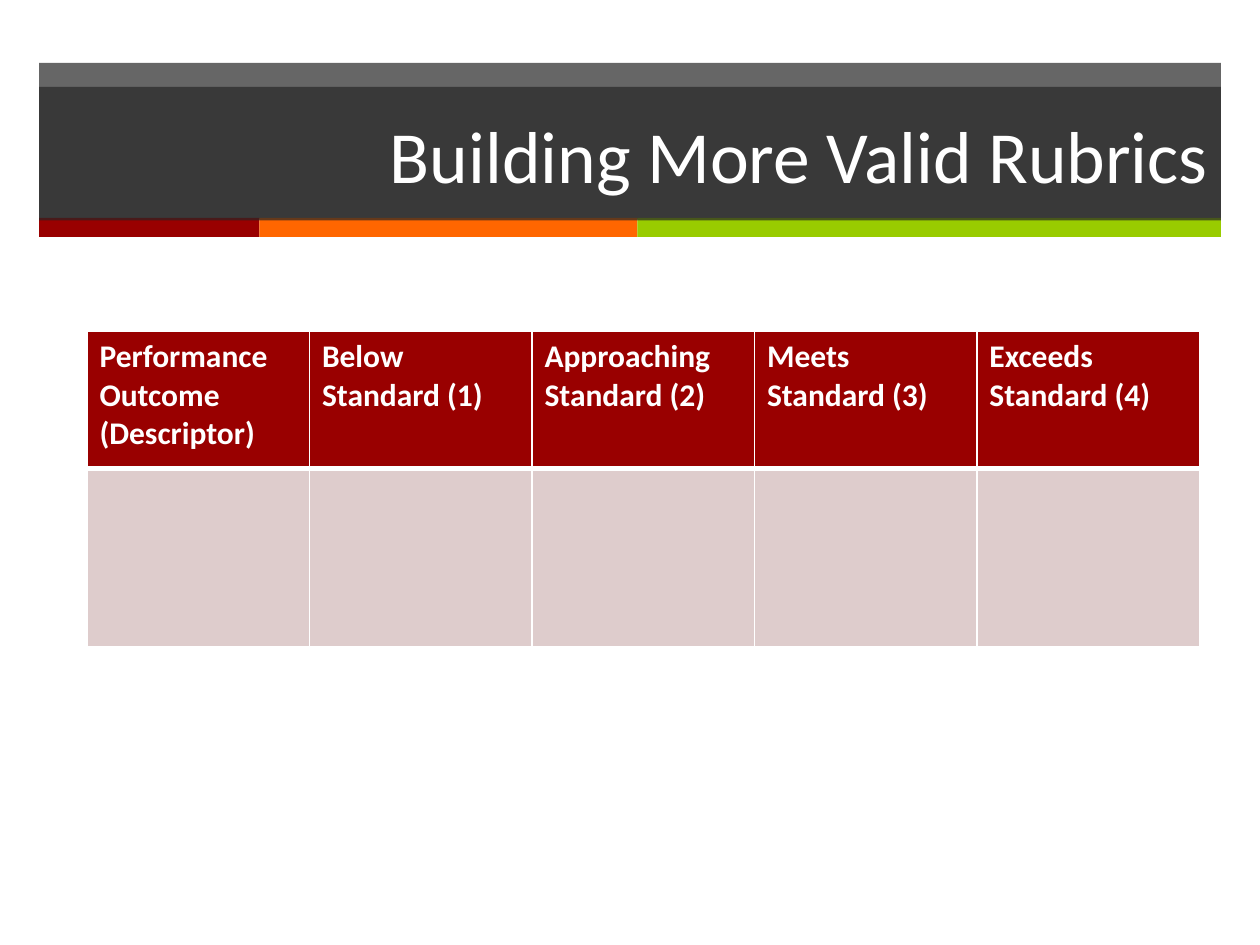
import pptx
import pptx.util
import pptx.dml.color
import pptx.enum.shapes
import pptx.enum.text
import pptx.oxml
import pptx.oxml.ns
from pptx.util import Inches

HUES = {"dark": "262626", "red": "990000", "orange": "FF6600",
        "green": "99CC00", "white": "FFFFFF", "pink": "DECCCC"}
HEADS = ["Performance Outcome (Descriptor)", "Below Standard (1)",
         "Approaching Standard (2)", "Meets Standard (3)",
         "Exceeds Standard (4)"]


def paint(fill, hue, alpha=None):
    """Give a fill one solid colour, with an optional opacity in percent."""
    fill.solid()
    fill.fore_color.rgb = pptx.dml.color.RGBColor.from_string(HUES[hue])
    return alpha


def fade(shape, alpha):
    """Set the opacity of a solid shape fill in percent."""
    tone = shape.element.spPr.find(".//" + pptx.oxml.ns.qn("a:srgbClr"))
    node = pptx.oxml.parse_xml(
        f'<a:alpha {pptx.oxml.ns.nsdecls("a")} val="{alpha * 1000}"/>')
    tone.append(node)


def place(shape, left, top, width, height):
    """Move and size a shape, in inches."""
    shape.left, shape.top = Inches(left), Inches(top)
    shape.width, shape.height = Inches(width), Inches(height)


def add_bar(slide, box, hue):
    """Add a plain coloured bar."""
    bar = slide.shapes.add_shape(
        pptx.enum.shapes.MSO_SHAPE.RECTANGLE, *map(Inches, box))
    bar.shadow.inherit = False
    bar.line.fill.background()
    paint(bar.fill, hue)
    return bar


def add_text(par, text, size, bold=False):
    """Add a white run to a paragraph."""
    run = par.add_run()
    run.text = text
    font = run.font
    font.name, font.size, font.bold = "Calibri", pptx.util.Pt(size), bold
    font.color.rgb = pptx.dml.color.RGBColor.from_string(HUES["white"])


def set_title(slide, text):
    """Fill the title and bring it in front of the bars."""
    title = slide.shapes.title
    place(title, 0.31, 0.69, 9.38, 1.06)
    paint(title.fill, "dark")
    fade(title, 70)
    frame = title.text_frame
    frame.auto_size = pptx.enum.text.MSO_AUTO_SIZE.NONE
    frame.vertical_anchor = pptx.enum.text.MSO_ANCHOR.MIDDLE
    par = frame.paragraphs[0]
    par.alignment = pptx.enum.text.PP_ALIGN.RIGHT
    add_text(par, text, 42)
    slide.shapes.element.append(title.element)


def set_edges(cell, top, base):
    """Draw white cell borders, with top and base widths in points."""
    props = cell._tc.get_or_add_tcPr()
    sides = {"lnL": 1, "lnR": 1, "lnT": top, "lnB": base}
    for spot, (side, width) in enumerate(sides.items()):
        props.insert(spot, pptx.oxml.parse_xml(
            f'<a:{side} {pptx.oxml.ns.nsdecls("a")} w="{width * 12700}">'
            f'<a:solidFill><a:srgbClr val="{HUES["white"]}"/></a:solidFill>'
            f'</a:{side}>'))


def add_grid(slide, heads):
    """Add the rubric table with a header row and an empty row."""
    grid = slide.shapes.add_table(
        2, len(heads), Inches(0.69), Inches(2.63),
        Inches(8.83), Inches(2.5)).table
    grid.rows[0].height, grid.rows[1].height = Inches(1.09), Inches(1.41)
    for col, head in enumerate(heads):
        top, low = grid.cell(0, col), grid.cell(1, col)
        paint(top.fill, "red")
        paint(low.fill, "pink")
        set_edges(top, 1, 3)
        set_edges(low, 3, 1)
        add_text(top.text_frame.paragraphs[0], head, 18, True)


def main():
    """Build and save the slide."""
    deck = pptx.Presentation()
    deck.slide_width, deck.slide_height = Inches(10), Inches(7.5)
    slide = deck.slides.add_slide(deck.slide_layouts[5])
    fade(add_bar(slide, (0.31, 0.5, 9.38, 1.24), "dark"), 70)
    left = 0.31
    for hue, width in (("red", 1.75), ("orange", 3), ("green", 4.63)):
        add_bar(slide, (left, 1.73, width, 0.15), hue)
        left += width
    set_title(slide, "Building More Valid Rubrics")
    add_grid(slide, HEADS)
    deck.save("out.pptx")


if __name__ == "__main__":
    main()
